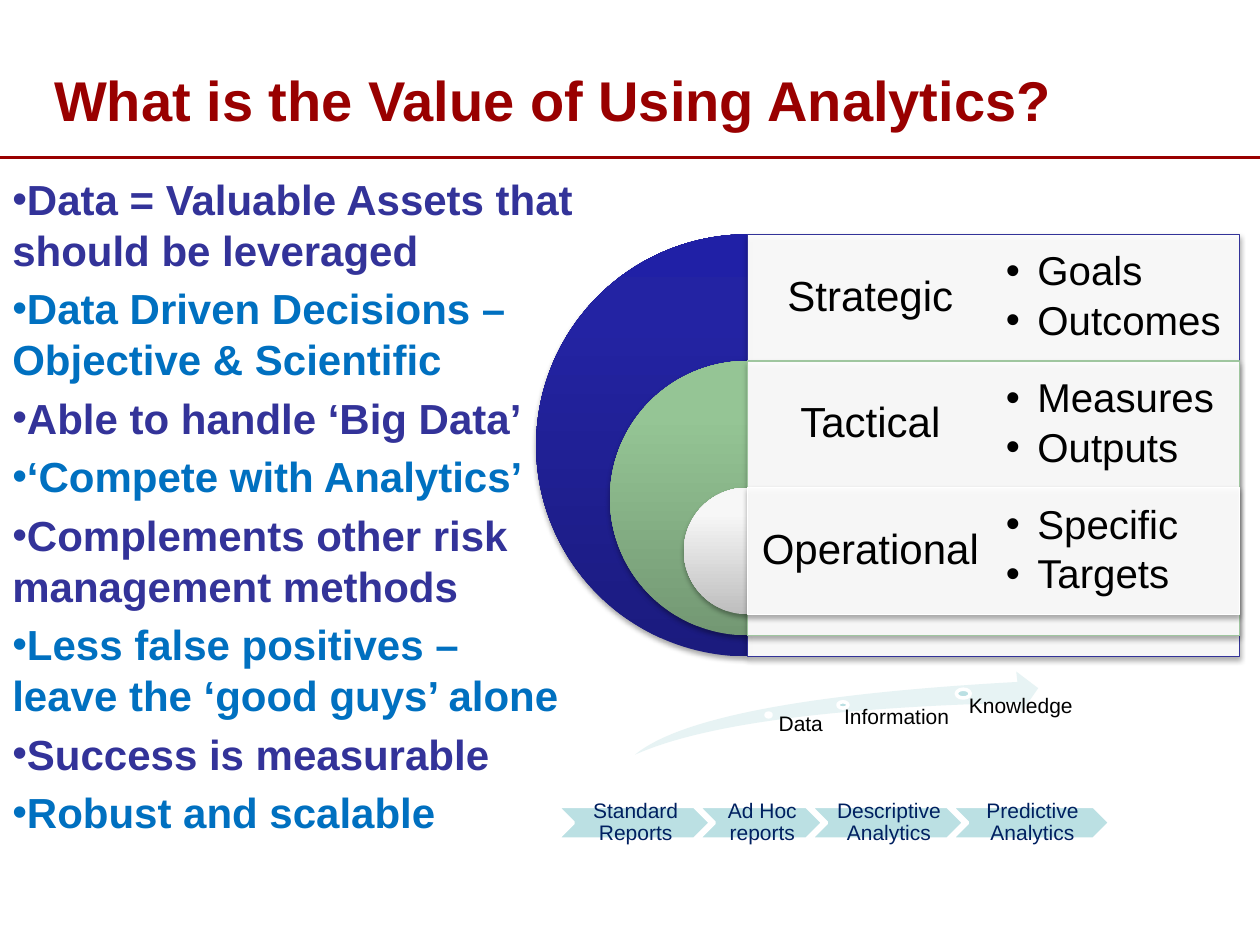
from dataclasses import dataclass

import pptx
import pptx.oxml
import pptx.util
from pptx.dml.color import RGBColor
from pptx.enum.shapes import MSO_CONNECTOR, MSO_SHAPE
from pptx.enum.text import MSO_ANCHOR, MSO_AUTO_SIZE, PP_ALIGN
from pptx.oxml.ns import nsdecls, qn
from pptx.util import Inches

COLORS = {
    "red": "990000", "indigo": "333399", "blue": "0070C0", "navy": "002060",
    "black": "000000", "white": "FFFFFF", "green": "9FC69F",
    "aqua": "BBE0E3", "pale": "E7F3F4",
}
FONT = "Arial"


@dataclass
class Band:
    label: str
    items: list[str]
    line: str
    gradient: list[str]


@dataclass
class Milestone:
    text: str
    dot: tuple[float, float, float, float]
    label: tuple[float, float, float, float]
    inset: float


@dataclass
class Step:
    text: str
    width: float


POINTS = [
    "Data = Valuable Assets that should be leveraged",
    "Data Driven Decisions – Objective & Scientific",
    "Able to handle ‘Big Data’",
    "‘Compete with Analytics’",
    "Complements other risk management methods",
    "Less false positives – leave the ‘good guys’ alone",
    "Success is measurable",
    "Robust and scalable",
]
BANDS = [
    Band("Strategic", ["Goals", "Outcomes"], "indigo", ["1B1B7E", "2323A3", "2020A6"]),
    Band("Tactical", ["Measures", "Outputs"], "green", ["739873", "95C595", "95C795"]),
    Band("Operational", ["Specific", "Targets"], "white", ["BEBEBE", "F7F7F7", "F8F8F8"]),
]
MILESTONES = [
    Milestone("Data", (6.08, 5.66, 0.04, 0.03), (6.15, 5.66, 0.45, 0.19), 0.03),
    Milestone("Information", (6.65, 5.57, 0.08, 0.05), (6.65, 5.61, 1.19, 0.36), 0.05),
    Milestone("Knowledge", (7.59, 5.47, 0.11, 0.07), (7.62, 5.52, 0.9, 0.46), 0.07),
]
STEPS = [
    Step("Standard Reports", 1.22), Step("Ad Hoc reports", 0.99),
    Step("Descriptive Analytics", 1.22), Step("Predictive Analytics", 1.26),
]


def rgb(name: str) -> RGBColor:
    return RGBColor.from_string(COLORS[name])


def write_text(frame, lines, *, size, colors=("black",), bold=False,
               align=PP_ALIGN.LEFT, anchor=MSO_ANCHOR.TOP, insets=(0.1, 0.05, 0.1, 0.05),
               spacing=None, before=0, after=0, bullet=False, hanging=0) -> None:
    """Fill a text frame with one paragraph per line, cycling through the colors."""
    frame.word_wrap = True
    frame.auto_size = MSO_AUTO_SIZE.NONE
    frame.vertical_anchor = anchor
    (frame.margin_left, frame.margin_top,
     frame.margin_right, frame.margin_bottom) = map(Inches, insets)
    for index, line in enumerate(lines):
        para = frame.add_paragraph() if index else frame.paragraphs[0]
        para.alignment = align
        para.line_spacing = spacing
        para.space_before = pptx.util.Pt(before if index else 0)
        para.space_after = pptx.util.Pt(after)
        if bullet:
            props = para._p.get_or_add_pPr()
            props.set("marL", str(Inches(hanging)))
            props.set("indent", str(-Inches(hanging)))
            for mark in (f'buFont {nsdecls("a")} typeface="{FONT}"',
                         f'buChar {nsdecls("a")} char="•"'):
                props.append(pptx.oxml.parse_xml(f"<a:{mark}/>"))
        span = para.add_run()
        span.text = line
        span.font.name = FONT
        span.font.size = pptx.util.Pt(size)
        span.font.bold = bold
        span.font.color.rgb = rgb(colors[index % len(colors)])


def add_text(page, place, lines, **style) -> None:
    box = page.shapes.add_textbox(*map(Inches, place))
    write_text(box.text_frame, lines, **style)


def add_shape(page, kind, place, *, fill=None, line=None, width=2.0, adjust=()):
    shape = page.shapes.add_shape(kind, *map(Inches, place))
    shape.shadow.inherit = False
    for index, value in enumerate(adjust):
        shape.adjustments[index] = value
    if fill:
        shape.fill.solid()
        shape.fill.fore_color.rgb = rgb(fill)
    if line:
        shape.line.color.rgb = rgb(line)
        shape.line.width = pptx.util.Pt(width)
    else:
        shape.line.fill.background()
    return shape


def add_shadow(shape) -> None:
    shape._element.spPr.find(qn("a:effectLst")).append(pptx.oxml.parse_xml(
        f'<a:outerShdw {nsdecls("a")} blurRad="{pptx.util.Pt(3.1)}" '
        f'dist="{pptx.util.Pt(1.8)}" dir="5400000" rotWithShape="0">'
        '<a:srgbClr val="000000"><a:alpha val="35000"/></a:srgbClr></a:outerShdw>'))


def set_gradient(shape, stops: list[str]) -> None:
    shape.fill.gradient()
    shape.fill.gradient_angle = 90
    stop_list = shape._element.spPr.find(qn("a:gradFill")).find(qn("a:gsLst"))
    for stop in list(stop_list):
        stop_list.remove(stop)
    for position, color in zip((0, 80000, 100000), stops):
        stop_list.append(pptx.oxml.parse_xml(
            f'<a:gs {nsdecls("a")} pos="{position}"><a:srgbClr val="{color}"/></a:gs>'))


def add_bands(page) -> None:
    center, top, diameter, width = 5.93, 1.86, 3.35, 3.91
    height = 0.3 * diameter
    style = dict(anchor=MSO_ANCHOR.MIDDLE, insets=(0.1,) * 4, spacing=0.9)
    for index, band in enumerate(BANDS):
        size = diameter * (1 - 0.35 * index)
        y = top + index * height
        pie = add_shape(page, MSO_SHAPE.PIE, (center - size / 2, y, size, size), adjust=(54, 162))
        set_gradient(pie, band.gradient)
        add_shadow(pie)
        panel = add_shape(page, MSO_SHAPE.RECTANGLE, (center, y, width, size),
                          fill="white", line=band.line, width=0.75)
        panel._element.spPr.find(qn("a:solidFill"))[0].append(
            pptx.oxml.parse_xml(f'<a:alpha {nsdecls("a")} val="90000"/>'))
        add_shadow(panel)
        add_text(page, (center, y, width / 2, height), [band.label],
                 size=24, align=PP_ALIGN.CENTER, after=8.4, **style)
    for index, band in enumerate(BANDS):
        add_text(page, (center + width / 2, top + index * height, width / 2, height), band.items,
                 size=23, after=3.45, bullet=True, hanging=0.25, **style)


def add_milestones(page) -> None:
    add_shape(page, MSO_SHAPE.SWOOSH_ARROW, (5.04, 5.33, 3.2, 0.66),
              fill="pale", adjust=(0.25, 0.25))
    for stone in MILESTONES:
        add_shape(page, MSO_SHAPE.OVAL, stone.dot, fill="aqua", line="white")
        add_text(page, stone.label, [stone.text], size=12, spacing=0.9, after=4.2,
                 insets=(stone.inset, 0, 0, 0))


def add_steps(page) -> None:
    left, overlap = 4.42, 0.1
    for step in STEPS:
        place = (left, 6.4, step.width, 0.26)
        add_shape(page, MSO_SHAPE.CHEVRON, place, fill="aqua", line="white")
        add_text(page, place, [step.text], size=12, colors=("navy",), align=PP_ALIGN.CENTER,
                 anchor=MSO_ANCHOR.MIDDLE, insets=(0.05, 0.02, 0.02, 0.02),
                 spacing=0.9, after=4.2)
        left += step.width - overlap


def main() -> None:
    deck = pptx.Presentation()
    deck.slide_width, deck.slide_height = Inches(10), Inches(7.5)
    page = deck.slides.add_slide(deck.slide_layouts[5])

    # Title and rule
    title = page.shapes.title
    title.left, title.top, title.width, title.height = map(Inches, (0.33, 0.25, 8.25, 0.85))
    write_text(title.text_frame, ["What is the Value of Using Analytics?"], size=32,
               colors=("red",), bold=True, anchor=MSO_ANCHOR.BOTTOM)
    rule = page.shapes.add_connector(MSO_CONNECTOR.STRAIGHT, 0, Inches(1.25),
                                     Inches(10), Inches(1.25))
    rule.line.color.rgb = rgb("red")
    rule.line.width = pptx.util.Pt(2.25)
    rule._element.spPr.append(pptx.oxml.parse_xml(f'<a:effectLst {nsdecls("a")}/>'))

    # Key points
    add_text(page, (0, 1.33, 4.66, 6), POINTS, size=24, colors=("indigo", "blue"),
             bold=True, before=4.8, bullet=True)

    # Diagrams
    add_bands(page)
    add_milestones(page)
    add_steps(page)
    deck.save("out.pptx")


if __name__ == "__main__":
    main()
